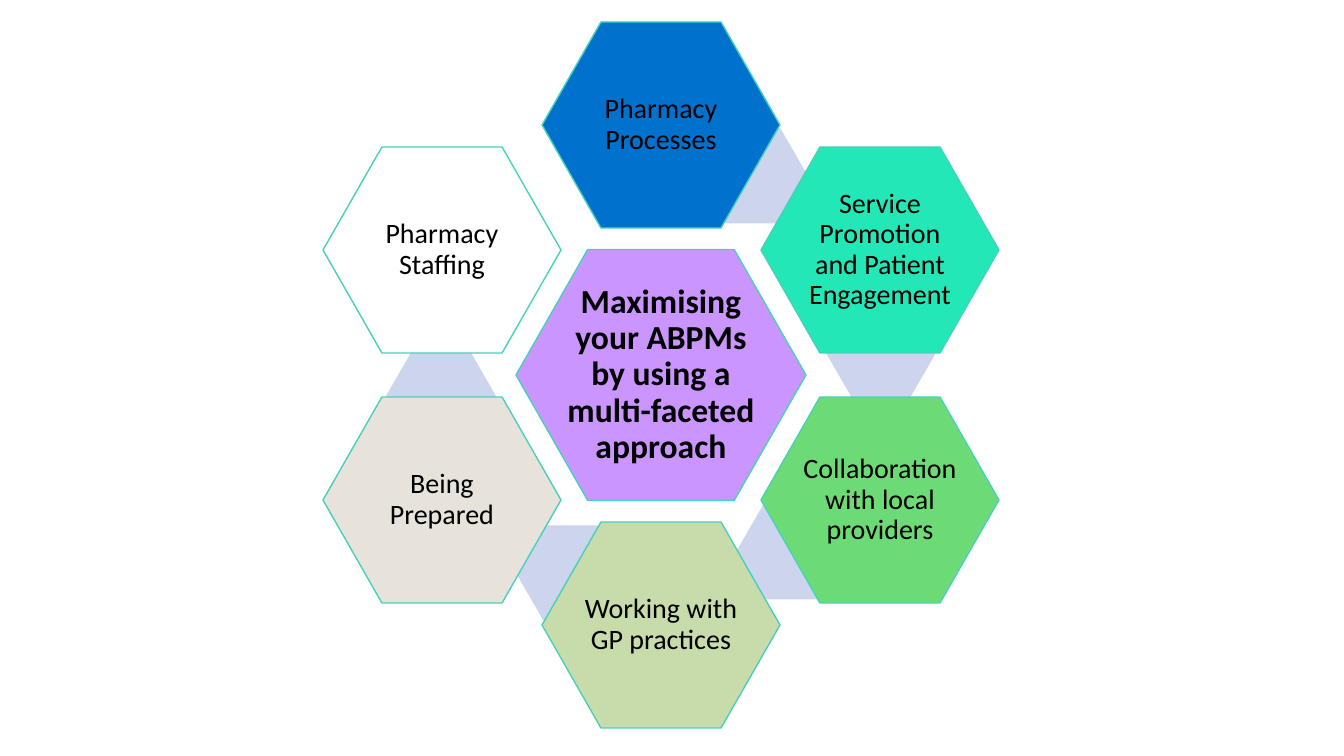
from dataclasses import dataclass

from pptx import Presentation
from pptx.dml.color import RGBColor
from pptx.enum.shapes import MSO_SHAPE as Shape
from pptx.enum.text import MSO_ANCHOR as Anchor, PP_ALIGN as Align
from pptx.util import Emu, Pt

# Content
HUB = ("Maximising your ABPMs by using a multi-faceted approach", "CB95FF")

# Text, fill, column and row steps from the hub
RING = [
    ("Pharmacy Processes", "0072CE", 0, -2),
    ("Service Promotion and Patient Engagement", "24E7B7", 1, -1),
    ("Collaboration with local providers", "6DDB75", 1, 1),
    ("Working with GP practices", "C8DBAA", 0, 2),
    ("Being Prepared", "E7E3DB", -1, 1),
    ("Pharmacy Staffing", "FFFFFF", -1, -1),
]

# Centres of the small link hexagons in px, one behind each gap of the ring
LINKS = [(753, 176), (881, 353), (791, 552), (571, 573), (441, 396)]


@dataclass(frozen=True)
class Theme:
    font: str = "Calibri"
    text: str = "000000"
    outline: str = "48D1BA"
    link: str = "CCD5ED"
    hub_size: int = 24
    ring_size: int = 20


THEME = Theme()

# Layout in px
SLIDE_SIZE = (1344, 756)
CENTRE_X, CENTRE_Y = 661, 375
COLUMN_STEP, ROW_STEP = 219, 125
HUB_SIZE, RING_SIZE, LINK_SIZE = (290, 251), (238, 206), (110, 95)
SIDE_MARGIN, END_MARGIN = 0, 3  # no side margin, so the longest word fits


def px(value):
    return Emu(round(value * 12192000 / SLIDE_SIZE[0]))


def add_hexagon(slide, centre, size, fill, adjustment=0.286):
    (x, y), (width, height) = centre, size
    shape = slide.shapes.add_shape(
        Shape.HEXAGON, px(x - width / 2), px(y - height / 2), px(width), px(height))
    shape.adjustments[0] = adjustment
    shape.shadow.inherit = False
    shape.fill.solid()
    shape.fill.fore_color.rgb = RGBColor.from_string(fill)
    shape.line.fill.background()
    return shape


def add_label_hexagon(slide, centre, size, fill, text, text_size, bold=False):
    shape = add_hexagon(slide, centre, size, fill)
    shape.line.color.rgb = RGBColor.from_string(THEME.outline)
    shape.line.width = Pt(1)
    frame = shape.text_frame
    frame.word_wrap = True
    frame.vertical_anchor = Anchor.MIDDLE
    frame.margin_left = frame.margin_right = px(SIDE_MARGIN)
    frame.margin_top = frame.margin_bottom = px(END_MARGIN)
    paragraph = frame.paragraphs[0]
    paragraph.alignment = Align.CENTER
    paragraph.line_spacing = 0.9
    run = paragraph.add_run()
    run.text = text
    run.font.name = THEME.font
    run.font.size = Pt(text_size)
    run.font.bold = bold
    run.font.color.rgb = RGBColor.from_string(THEME.text)


def main():
    presentation = Presentation()
    presentation.slide_width, presentation.slide_height = map(px, SLIDE_SIZE)
    slide = presentation.slides.add_slide(presentation.slide_layouts[6])

    # Links lie behind the ring
    for centre in LINKS:
        add_hexagon(slide, centre, LINK_SIZE, THEME.link, 0.289)

    # Hub
    text, fill = HUB
    add_label_hexagon(slide, (CENTRE_X, CENTRE_Y), HUB_SIZE, fill, text,
                      THEME.hub_size, bold=True)

    # Ring
    for text, fill, column, row in RING:
        centre = (CENTRE_X + column * COLUMN_STEP, CENTRE_Y + row * ROW_STEP)
        add_label_hexagon(slide, centre, RING_SIZE, fill, text, THEME.ring_size)

    presentation.save("out.pptx")


if __name__ == "__main__":
    main()
